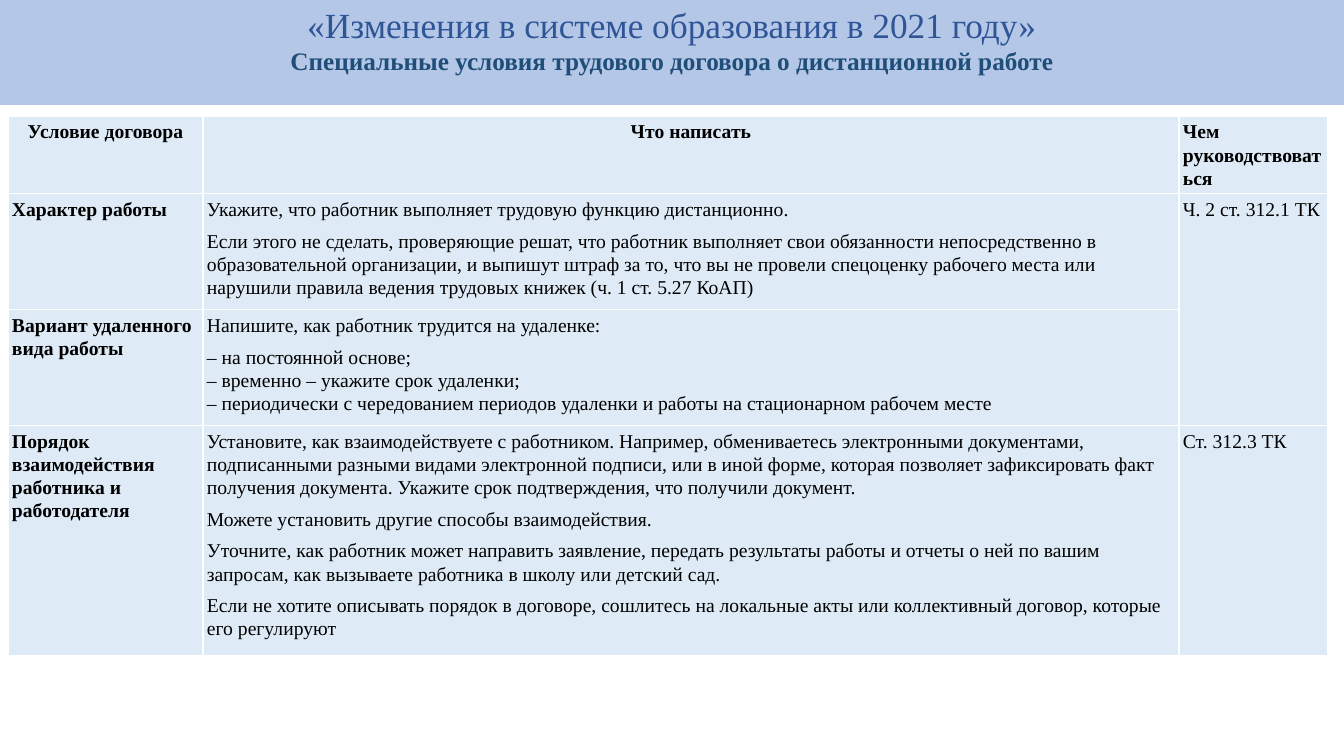
from pptx import Presentation
from pptx import util as u
from pptx.dml.color import RGBColor
from pptx.enum import text

FONT = "Times New Roman"
SCALE = 914400 / 100.8
SLIDE_SIZE = (1344, 756)
TITLE_BOX = (0, -5, 1344, 110)
TABLE_ORIGIN = (8, 116)
COLUMN_WIDTHS = (195, 976, 149)
ROW_HEIGHTS = (77, 116, 116, 230)
BAND_FILL, CELL_FILL, CELL_TEXT = "B4C7E7", "DEEBF7", "000000"

TITLE_LINES = [
    ("«Изменения в системе образования в 2021 году»", 25.2, False, "2F5597"),
    ("Специальные условия трудового договора о дистанционной работе", 18, True, "1F4E79"),
]

ROWS = [
    (["Условие договора"], ["Что написать"], ["Чем руководствоваться"]),
    (
        ["Характер работы"],
        [
            "Укажите, что работник выполняет трудовую функцию дистанционно.",
            "Если этого не сделать, проверяющие решат, что работник выполняет свои обязанности "
            "непосредственно в образовательной организации, и выпишут штраф за то, что вы не "
            "провели спецоценку рабочего места или нарушили правила ведения трудовых книжек "
            "(ч. 1 ст. 5.27 КоАП)",
        ],
        ["Ч. 2 ст. 312.1 ТК"],
    ),
    (
        ["Вариант удаленного вида работы"],
        [
            "Напишите, как работник трудится на удаленке:",
            "– на постоянной основе;\n– временно – укажите срок удаленки;\n"
            "– периодически с чередованием периодов удаленки и работы на стационарном рабочем месте",
        ],
        [],
    ),
    (
        ["Порядок взаимодействия работника и работодателя"],
        [
            "Установите, как взаимодействуете с работником. Например, обмениваетесь электронными "
            "документами, подписанными разными видами электронной подписи, или в иной форме, "
            "которая позволяет зафиксировать факт получения документа. Укажите срок "
            "подтверждения, что получили документ.",
            "Можете установить другие способы взаимодействия.",
            "Уточните, как работник может направить заявление, передать результаты работы и "
            "отчеты о ней по вашим запросам, как вызываете работника в школу или детский сад.",
            "Если не хотите описывать порядок в договоре, сошлитесь на локальные акты или "
            "коллективный договор, которые его регулируют",
        ],
        ["Ст. 312.3 ТК"],
    ),
]


def px(length):
    return u.Emu(round(length * SCALE))


def color(value):
    return RGBColor.from_string(value)


def write(frame, index, content, size, bold, value, align):
    paragraph = frame.paragraphs[0] if index == 0 else frame.add_paragraph()
    paragraph.text = content
    paragraph.alignment = align
    font = paragraph.font
    font.name, font.size, font.bold = FONT, u.Pt(size), bold
    font.color.rgb = color(value)
    return paragraph


def add_title(slide):
    title = slide.shapes.title
    title.left, title.top, title.width, title.height = map(px, TITLE_BOX)
    title.fill.solid()
    title.fill.fore_color.rgb = color(BAND_FILL)
    frame = title.text_frame
    frame.auto_size = text.MSO_AUTO_SIZE.NONE
    frame.vertical_anchor = text.MSO_ANCHOR.TOP
    frame.margin_top = px(8)
    for index, line in enumerate(TITLE_LINES):
        paragraph = write(frame, index, *line, text.PP_ALIGN.CENTER)
        paragraph.line_spacing = 1.0
        paragraph.space_before = u.Pt(0)


def fill_cell(cell, paragraphs, bold, align):
    cell.fill.solid()
    cell.fill.fore_color.rgb = color(CELL_FILL)
    cell.margin_left = cell.margin_right = cell.margin_top = cell.margin_bottom = px(4)
    for index, content in enumerate(paragraphs):
        paragraph = write(cell.text_frame, index, content, 14, bold, CELL_TEXT, align)
        paragraph.line_spacing = 1.07
        paragraph.space_after = u.Pt(6)


def add_terms_table(slide):
    size = (sum(COLUMN_WIDTHS), sum(ROW_HEIGHTS))
    frame = slide.shapes.add_table(
        len(ROWS), len(COLUMN_WIDTHS), *map(px, TABLE_ORIGIN + size))
    table = frame.table
    for column, width in zip(table.columns, COLUMN_WIDTHS):
        column.width = px(width)
    for row, height in zip(table.rows, ROW_HEIGHTS):
        row.height = px(height)
    table.cell(1, 2).merge(table.cell(2, 2))
    for r, row in enumerate(ROWS):
        for c, paragraphs in enumerate(row):
            centered = r == 0 and c < 2
            align = text.PP_ALIGN.CENTER if centered else text.PP_ALIGN.LEFT
            fill_cell(table.cell(r, c), paragraphs, r == 0 or c == 0, align)


def main():
    """Build the slide on remote-work contract terms."""
    presentation = Presentation()
    presentation.slide_width, presentation.slide_height = map(px, SLIDE_SIZE)
    slide = presentation.slides.add_slide(presentation.slide_layouts[5])
    add_title(slide)
    add_terms_table(slide)
    presentation.save("out.pptx")


if __name__ == "__main__":
    main()
